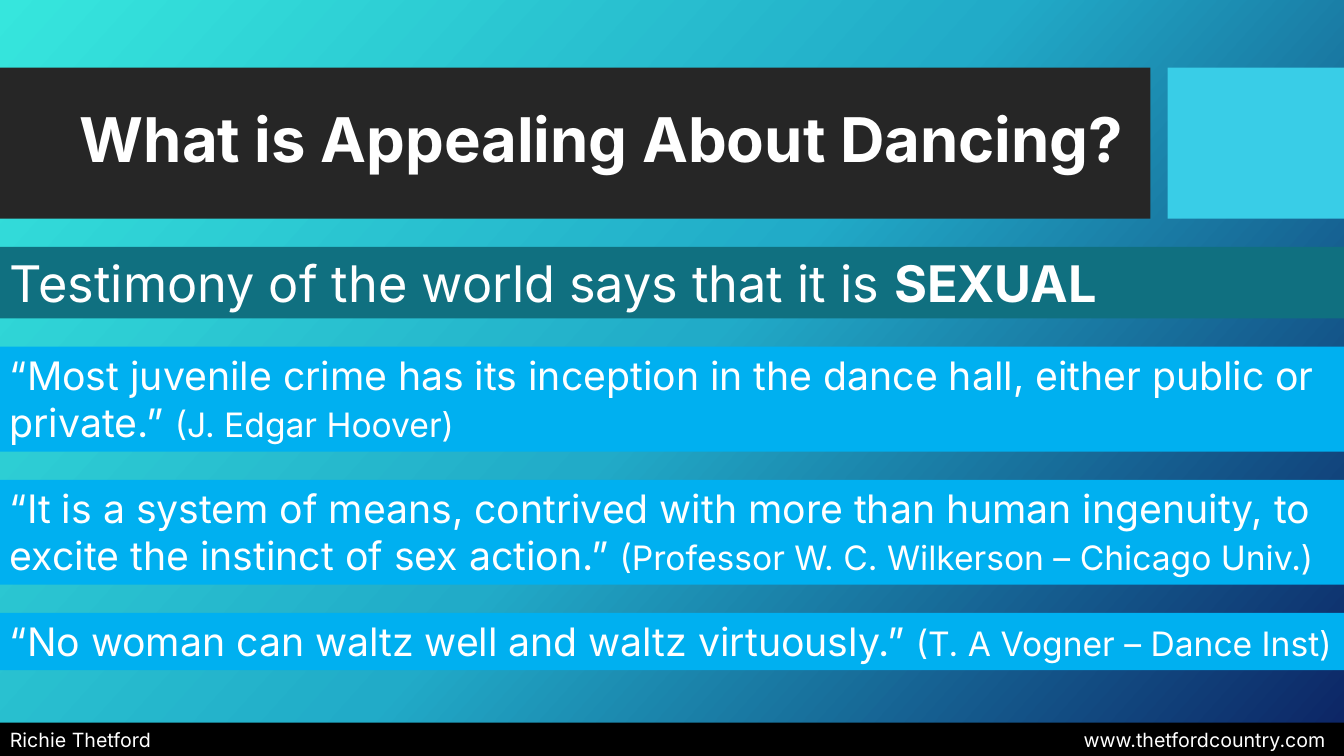
import copy
from dataclasses import dataclass

import pptx
import pptx.dml.color
import pptx.enum.shapes
import pptx.enum.text
import pptx.oxml
import pptx.oxml.ns
import pptx.util
from pptx.util import Inches

FONT = "Inter"
WHITE = "FFFFFF"
BLACK = "000000"
CHARCOAL = "262626"
AQUA = "39CDE7"
TEAL = "107080"
SKY = "00B0F0"
BACKDROP = [(0, "36E6DD"), (0.5, "21ABC8"), (1, "0C2263")]

SLIDE_WIDTH = 13.33
BANDS_TOP = 2.45
BAND_GAP = 0.28
FOOTER_TOP = 7.17
FOOTER_TAB = 13.05


@dataclass
class Phrase:
    text: str
    size: int
    bold: bool = False


@dataclass
class Band:
    height: float
    color: str
    phrases: list[Phrase]


def quote(height: float, words: str, speaker: str) -> Band:
    return Band(height, SKY, [Phrase(f"“{words}” ", 28), Phrase(f"({speaker})", 24)])


BANDS = [
    Band(0.71, TEAL, [Phrase("Testimony of the world says that it is ", 36),
                      Phrase("SEXUAL", 36, bold=True)]),
    quote(1.04, "Most juvenile crime has its inception in the dance hall, "
                "either public or private.", "J. Edgar Hoover"),
    quote(1.04, "It is a system of means, contrived with more than human ingenuity, "
                "to excite the instinct of sex action.",
          "Professor W. C. Wilkerson – Chicago Univ."),
    quote(0.57, "No woman can waltz well and waltz virtuously.",
          "T. A Vogner – Dance Inst"),
]
FOOTER = Band(0.34, BLACK, [Phrase("Richie Thetford\twww.thetfordcountry.com", 14)])


def rgb(color: str) -> pptx.dml.color.RGBColor:
    return pptx.dml.color.RGBColor.from_string(color)


def style_font(font, size: int, bold: bool = False) -> None:
    font.name = FONT
    font.size = pptx.util.Pt(size)
    font.bold = bold
    font.color.rgb = rgb(WHITE)


def paint_backdrop(slide) -> None:
    fill = slide.background.fill
    fill.gradient()
    fill.gradient_angle = 360 - 42
    stop_list = slide.element.find(".//" + pptx.oxml.ns.qn("a:gsLst"))
    stop_list.append(copy.deepcopy(stop_list[-1]))
    for stop, (position, color) in zip(fill.gradient_stops, BACKDROP):
        stop.position = position
        stop.color.rgb = rgb(color)


def add_panel(slide, left: float, top: float, width: float, height: float, color: str):
    panel = slide.shapes.add_shape(
        pptx.enum.shapes.MSO_SHAPE.RECTANGLE,
        Inches(left), Inches(top), Inches(width), Inches(height))
    panel.shadow.inherit = False
    panel.fill.solid()
    panel.fill.fore_color.rgb = rgb(color)
    panel.line.fill.background()
    return panel


def add_band(slide, band: Band, top: float):
    """Draw a full-width band with its text and return the paragraph."""
    frame = add_panel(slide, 0, top, SLIDE_WIDTH, band.height, band.color).text_frame
    frame.word_wrap = True
    frame.auto_size = pptx.enum.text.MSO_AUTO_SIZE.SHAPE_TO_FIT_TEXT
    frame.vertical_anchor = pptx.enum.text.MSO_ANCHOR.TOP
    paragraph = frame.paragraphs[0]
    paragraph.alignment = pptx.enum.text.PP_ALIGN.LEFT
    for phrase in band.phrases:
        run = paragraph.add_run()
        run.text = phrase.text
        style_font(run.font, phrase.size, phrase.bold)
    return paragraph


def add_right_tab(paragraph, position: float) -> None:
    properties = paragraph._p.get_or_add_pPr()
    tabs = pptx.oxml.parse_xml(
        f'<a:tabLst {pptx.oxml.ns.nsdecls("a")}>'
        f'<a:tab pos="{Inches(position)}" algn="r"/></a:tabLst>')
    properties.append(tabs)


def add_title(slide, text: str) -> None:
    """Fill the title placeholder and bring it in front of the panels."""
    title = slide.shapes.title
    title.left, title.top = Inches(0.49), Inches(0.82)
    title.width, title.height = Inches(10.77), Inches(1.18)
    title.element.getparent().append(title.element)
    frame = title.text_frame
    frame.text = text
    frame.word_wrap = True
    frame.auto_size = pptx.enum.text.MSO_AUTO_SIZE.NONE
    frame.vertical_anchor = pptx.enum.text.MSO_ANCHOR.MIDDLE
    paragraph = frame.paragraphs[0]
    paragraph.alignment = pptx.enum.text.PP_ALIGN.RIGHT
    paragraph.line_spacing = 0.9
    style_font(paragraph.font, 44, bold=True)


def main() -> None:
    presentation = pptx.Presentation()
    presentation.slide_width = Inches(SLIDE_WIDTH)
    presentation.slide_height = Inches(7.5)
    slide = presentation.slides.add_slide(
        presentation.slide_layouts.get_by_name("Title Only"))

    paint_backdrop(slide)
    add_panel(slide, 0, 0.67, 11.41, 1.5, CHARCOAL)
    add_panel(slide, 11.58, 0.67, 1.75, 1.5, AQUA)
    add_right_tab(add_band(slide, FOOTER, FOOTER_TOP), FOOTER_TAB)
    add_title(slide, "What is Appealing About Dancing?")

    top = BANDS_TOP
    for band in BANDS:
        add_band(slide, band, top)
        top += band.height + BAND_GAP

    presentation.save("out.pptx")


if __name__ == "__main__":
    main()
